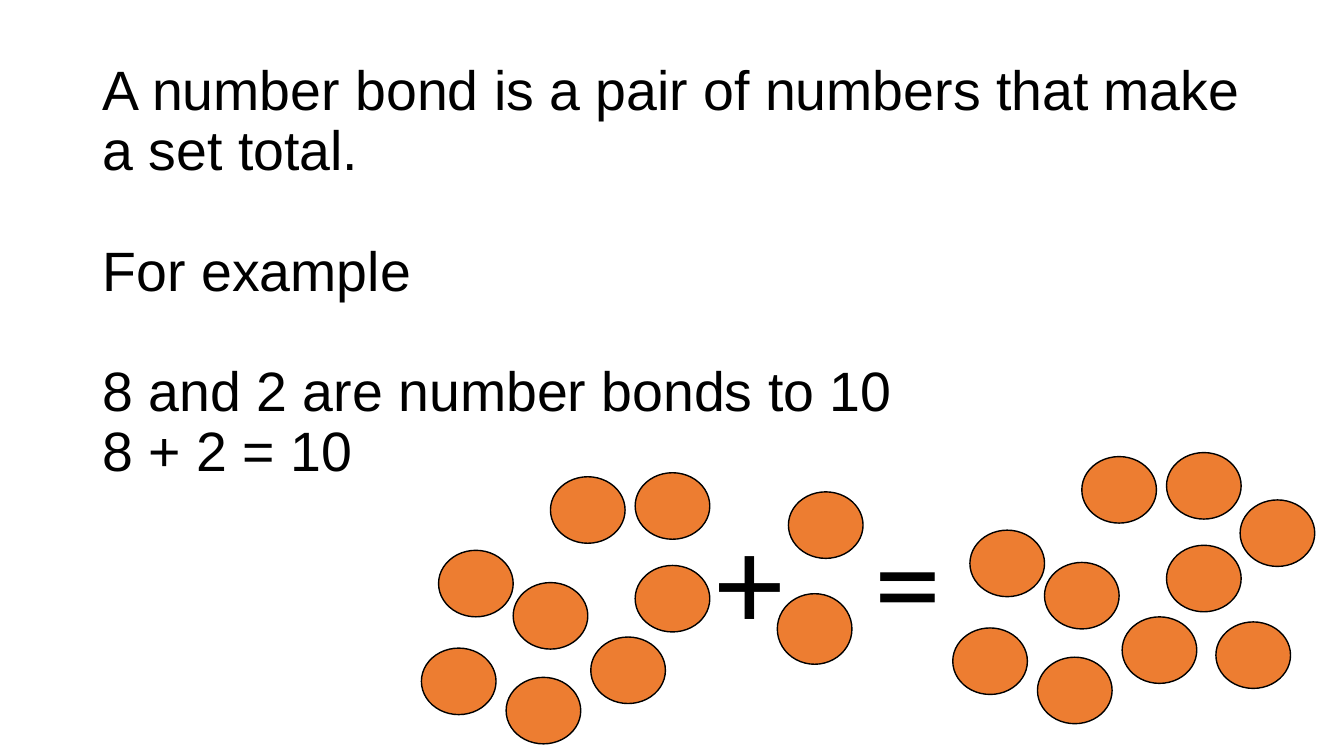
from lxml import etree
from pptx import Presentation
from pptx.dml.color import RGBColor
from pptx.enum import shapes, text
from pptx.oxml.ns import qn
from pptx.util import Inches, Pt

COLOURS = {"counter": "ED7D31", "ink": "000000"}

deck = Presentation()
deck.slide_width, deck.slide_height = Inches(13.33), Inches(7.5)
page = deck.slides.add_slide(deck.slide_layouts[5])


def style_paragraph(para, font_name, size):
    para.alignment = text.PP_ALIGN.LEFT
    for span in para.runs:
        span.font.name = font_name
        span.font.size = Pt(size)
        span.font.color.rgb = RGBColor.from_string(COLOURS["ink"])


# Explanation
title = page.shapes.title
title.left, title.top = Inches(0.92), Inches(0.4)
title.width, title.height = Inches(11.5), Inches(5.22)
frame = title.text_frame
frame.word_wrap = True
frame.auto_size = text.MSO_AUTO_SIZE.NONE
frame.vertical_anchor = text.MSO_ANCHOR.MIDDLE
frame.margin_bottom = Inches(0.65)
frame.text = "\n".join([
    "A number bond is a pair of numbers that make a set total.",
    "For example",
    "8 and 2 are number bonds to 10",
    "8 + 2 = 10",
])
for para, gap in zip(frame.paragraphs, [0, 0.6, 0.6, 0]):
    style_paragraph(para, "Arial", 39.6)
    para.line_spacing = 0.9
    para.space_before = Inches(gap)

# Counters: eight plus two, then the same eight moved right with two more
eight = [(5.09, 5.78), (6.3, 5.61), (5.86, 6.32), (4.35, 5.46),
         (6.3, 4.69), (5.46, 4.73), (5.02, 6.72), (4.18, 6.43)]
two = [(7.71, 5.89, 0.7), (7.82, 4.88, 0.66)]
extra = [(12.06, 6.17), (12.3, 4.96)]
total = [(left + 5.27, top - 0.2) for left, top in eight] + extra

counters = [(left, top, 0.66) for left, top in eight]
counters += two
counters += [(left, top, 0.66) for left, top in total]
for left, top, height in counters:
    counter = page.shapes.add_shape(
        shapes.MSO_SHAPE.OVAL, Inches(left), Inches(top), Inches(0.74), Inches(height))
    counter.shadow.inherit = False
    counter.fill.solid()
    counter.fill.fore_color.rgb = RGBColor.from_string(COLOURS["counter"])
    counter.line.color.rgb = RGBColor.from_string(COLOURS["ink"])
    counter.line.width = Pt(1)

# Plus and equals signs, set apart by a tab stop
signs = page.shapes.add_textbox(Inches(7.01), Inches(4.87), Inches(2.46), Inches(1.72))
signs.text_frame.word_wrap = True
para = signs.text_frame.paragraphs[0]
para.text = "+\t="
style_paragraph(para, "Calibri", 96)
tabs = etree.SubElement(para._p.get_or_add_pPr(), qn("a:tabLst"))
etree.SubElement(tabs, qn("a:tab"), pos=str(Inches(1.57)), algn="l")

deck.save("out.pptx")
